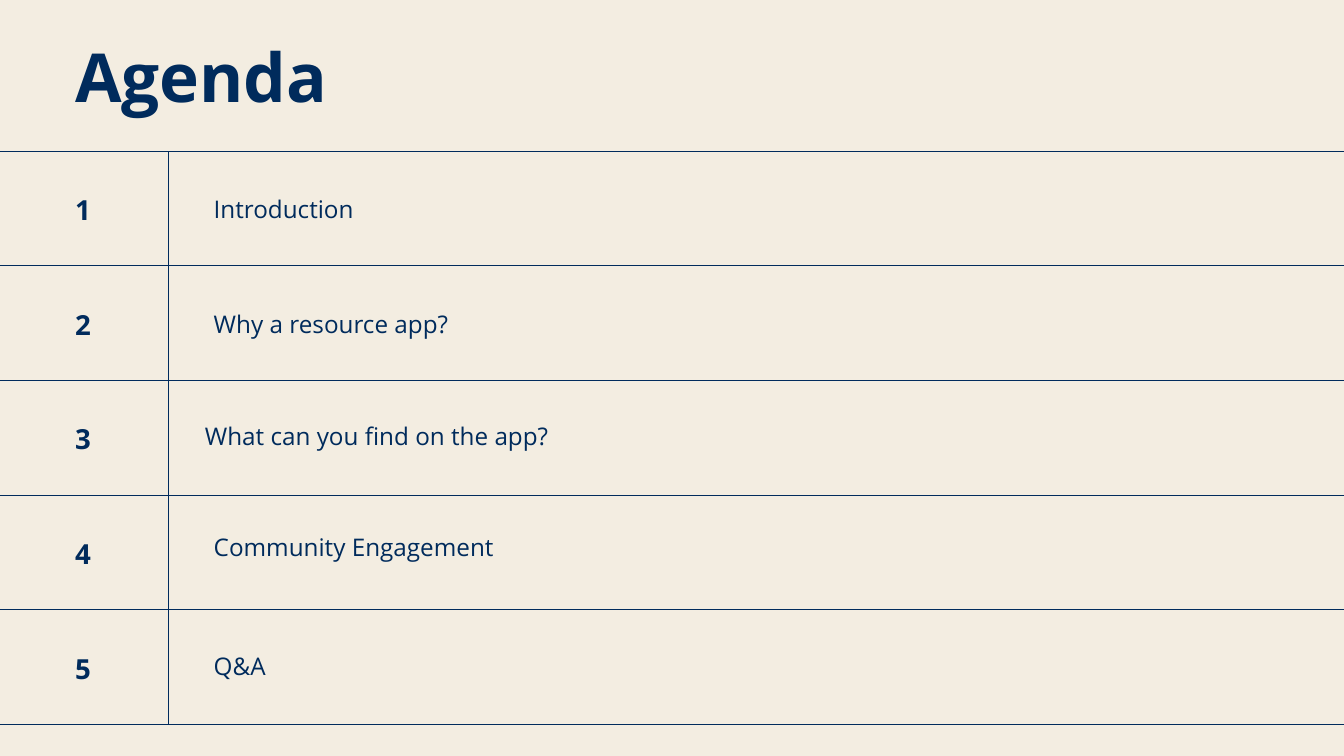
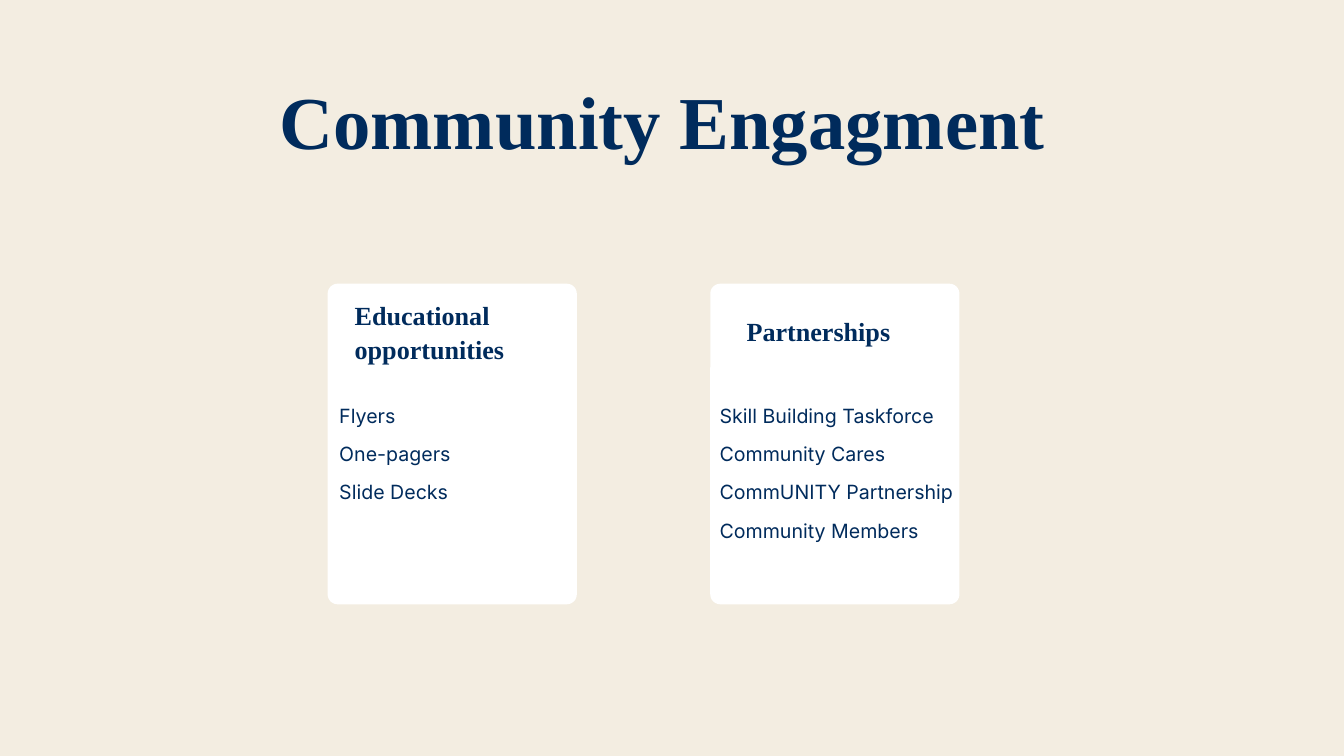
from pptx import Presentation
from pptx.dml.color import RGBColor
from pptx.enum.shapes import MSO_CONNECTOR as Connector, MSO_SHAPE as Shape
from pptx.enum.text import MSO_ANCHOR as Anchor, MSO_AUTO_SIZE as AutoSize, PP_ALIGN as Align
from pptx.util import Pt
from lxml import etree

COLORS = {"background": "F3EDE1", "navy": "002B5C", "card": "FFFFFF"}
DRAWING_NS = "http://schemas.openxmlformats.org/drawingml/2006/main"
SLIDE_WIDTH, SLIDE_HEIGHT = 1440, 810
TITLE_ONLY = 5


def write_text(shape, text, box, font, size, line_spacing, bold=False, align=Align.LEFT):
    """Place a text box or title placeholder and give it one styled paragraph."""
    shape.left, shape.top, shape.width, shape.height = [Pt(length) for length in box]
    frame = shape.text_frame
    frame.text = text
    frame.word_wrap = True
    frame.auto_size = AutoSize.NONE
    frame.vertical_anchor = Anchor.TOP
    frame.margin_left = frame.margin_top = frame.margin_right = frame.margin_bottom = 0
    paragraph = frame.paragraphs[0]
    paragraph.alignment = align
    paragraph.line_spacing = Pt(line_spacing)
    run_font = paragraph.runs[0].font
    run_font.name, run_font.size, run_font.bold = font, Pt(size), bold
    run_font.color.rgb = RGBColor.from_string(COLORS["navy"])


def add_rule(slide, x1, y1, x2, y2):
    rule = slide.shapes.add_connector(Connector.STRAIGHT, Pt(x1), Pt(y1), Pt(x2), Pt(y2))
    rule.line.color.rgb = RGBColor.from_string(COLORS["navy"])
    rule.line.width = Pt(0.75)
    etree.SubElement(rule._element.spPr, f"{{{DRAWING_NS}}}effectLst")


presentation = Presentation()
presentation.slide_width, presentation.slide_height = Pt(SLIDE_WIDTH), Pt(SLIDE_HEIGHT)
background = presentation.slide_master.background.fill
background.solid()
background.fore_color.rgb = RGBColor.from_string(COLORS["background"])
layout = presentation.slide_layouts[TITLE_ONLY]

# Agenda
slide = presentation.slides.add_slide(layout)
write_text(slide.shapes.title, "Agenda", (80.5, 23, 1300, 96.5), "Open Sans", 72.3, 101.2, bold=True)

GRID_TOP, ROW_HEIGHT = 162, 122.84
# Each topic with its left edge and its distance below the row's upper rule
topics = [
    ("Introduction", 229, 44),
    ("Why a resource app?", 229, 43.5),
    ("What can you find on the app?", 219.5, 41),
    ("Community Engagement", 229, 37),
    ("Q&A", 229, 42),
]
grid_bottom = GRID_TOP + len(topics) * ROW_HEIGHT
for index in range(len(topics) + 1):
    rule_y = GRID_TOP + index * ROW_HEIGHT
    add_rule(slide, 0, rule_y, SLIDE_WIDTH, rule_y)
add_rule(slide, 180, GRID_TOP, 180, grid_bottom)

for index, (topic, left, offset) in enumerate(topics):
    row_top = GRID_TOP + index * ROW_HEIGHT
    write_text(slide.shapes.add_textbox(0, 0, 0, 0), str(index + 1),
               (80.5, row_top + 41.75, 17, 37.5), "Open Sans", 29.6, 38.5, bold=True)
    write_text(slide.shapes.add_textbox(0, 0, 0, 0), topic,
               (left, row_top + offset, 1083, 33.5), "Open Sans", 26, 33.8)

# Community engagement
slide = presentation.slides.add_slide(layout)
write_text(slide.shapes.title, "Community Engagment", (155, 80, 1109.5, 96.5),
           "Times New Roman", 80, 96, bold=True, align=Align.CENTER)

CARD_TOP, CARD_WIDTH, CARD_HEIGHT = 304, 267, 343.5
ITEMS_TOP, ITEM_PITCH = 426.25, 41
# Card left, heading with its box, left edge of the items, items
cards = [
    (351, "Educational opportunities", (380, 317.5, 209.5, 71.5), 363.5,
     ["Flyers", "One-pagers", "Slide Decks"]),
    (761, "Partnerships", (800, 335.5, 209.5, 35.5), 771,
     ["Skill Building Taskforce", "Community Cares", "CommUNITY Partnership", "Community Members"]),
]
for card_left, heading, heading_box, items_left, items in cards:
    card = slide.shapes.add_shape(Shape.ROUNDED_RECTANGLE, Pt(card_left), Pt(CARD_TOP),
                                  Pt(CARD_WIDTH), Pt(CARD_HEIGHT))
    card.adjustments[0] = 0.04
    card.shadow.inherit = False
    card.fill.solid()
    card.fill.fore_color.rgb = RGBColor.from_string(COLORS["card"])
    card.line.fill.background()
    write_text(slide.shapes.add_textbox(0, 0, 0, 0), heading, heading_box,
               "Times New Roman", 28, 36.4, bold=True)
    items_width = card_left + CARD_WIDTH - items_left
    for index, item in enumerate(items):
        write_text(slide.shapes.add_textbox(0, 0, 0, 0), item,
                   (items_left, ITEMS_TOP + index * ITEM_PITCH, items_width, 30), "Inter", 21, 31.5)

presentation.save("out.pptx")
